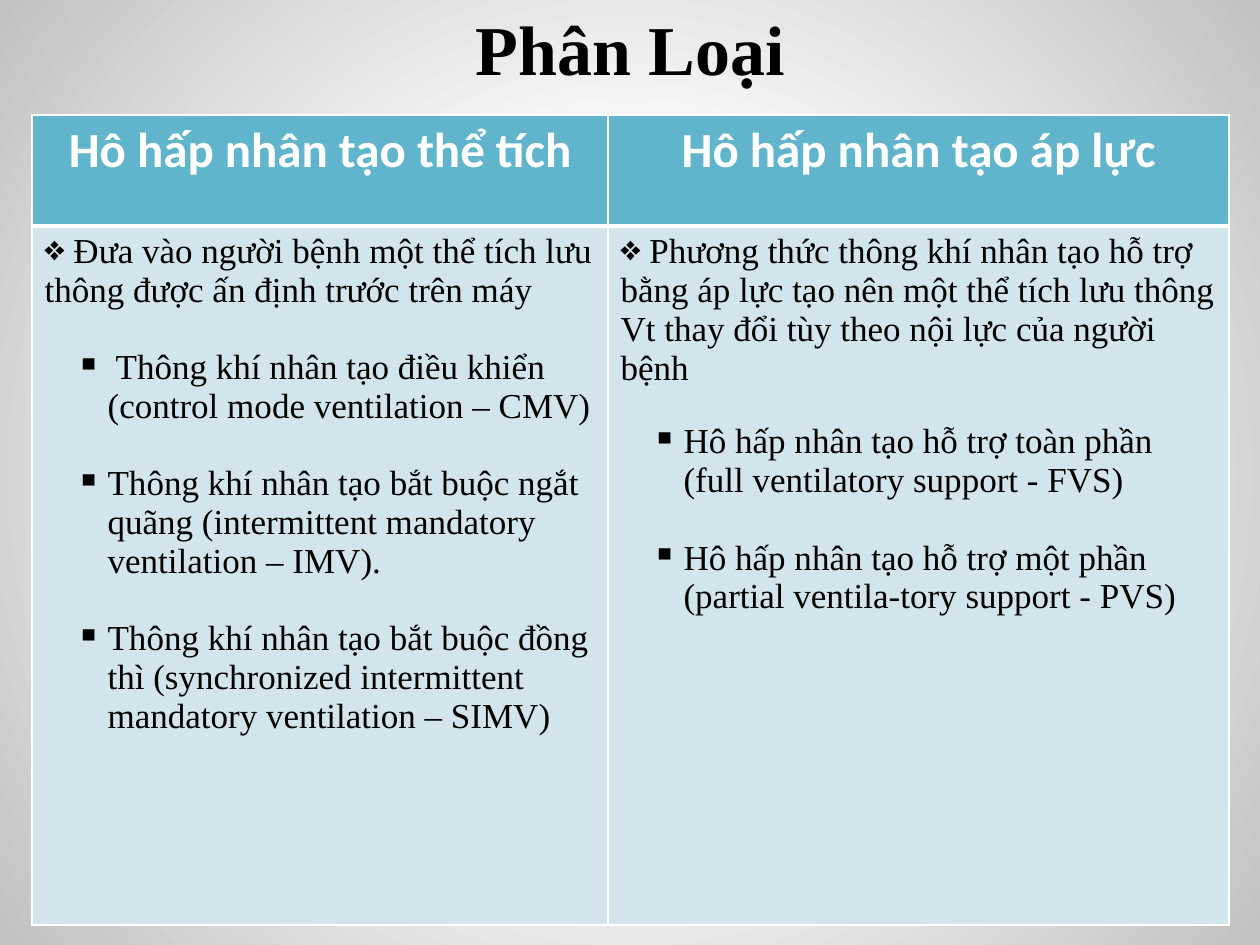
from dataclasses import dataclass

from pptx import Presentation
from pptx.dml.color import RGBColor
from pptx.enum.text import MSO_ANCHOR, MSO_AUTO_SIZE, PP_ALIGN
from pptx.oxml import parse_xml
from pptx.oxml.ns import nsdecls, qn
from pptx.oxml.xmlchemy import OxmlElement
from pptx.util import Emu, Pt

CENTER, LEFT = PP_ALIGN.CENTER, PP_ALIGN.LEFT
MIDDLE, TOP = MSO_ANCHOR.MIDDLE, MSO_ANCHOR.TOP
NO_FIT = MSO_AUTO_SIZE.NONE

BLACK = RGBColor(0x00, 0x00, 0x00)
WHITE = RGBColor(0xFF, 0xFF, 0xFF)
EDGE_GRAY = RGBColor(0xC1, 0xC1, 0xC1)
HEADER_BLUE = RGBColor(0x60, 0xB5, 0xCC)
BODY_BLUE = RGBColor(0xD2, 0xE5, 0xEC)

SERIF = "Times New Roman"
TITLE_FONT = {"name": SERIF, "size": Pt(40), "bold": True}
HEADER_FONT = {"name": "Calibri", "size": Pt(28), "bold": True}
BODY_FONT = {"name": SERIF, "size": Pt(20), "bold": False}

EMU_PER_PX = 914400 / 126
SLIDE_SIZE = (1260, 945)
TITLE_BOX = (63, 0, 1134, 94)
TABLE_LEFT, TABLE_TOP = 32, 115
COLUMN_WIDTHS = (576, 621)
ROW_HEIGHTS = (111, 699)
THIN, THICK = Pt(1), Pt(3)
EN_SPACE = " "  # one half-em space after a bullet


@dataclass(frozen=True)
class Bullet:
    char: str
    level: int
    margin: int
    indent: int


@dataclass(frozen=True)
class Item:
    text: str
    bullet: Bullet
    gap: int = 0  # points before the paragraph


@dataclass(frozen=True)
class Category:
    heading: str
    items: tuple[Item, ...]


DIAMOND = Bullet("❖", 0, 0, 0)
SQUARE = Bullet("▪", 1, 63, -32)

CATEGORIES = (
    Category("Hô hấp nhân tạo thể tích", (
        Item(EN_SPACE + "Đưa vào người bệnh một thể tích lưu thông được ấn định "
             "trước trên máy", DIAMOND),
        Item(EN_SPACE + "Thông khí nhân tạo điều khiển "
             "(control mode ventilation – CMV)", SQUARE, 22),
        Item("Thông khí nhân tạo bắt buộc ngắt quãng "
             "(intermittent mandatory ventilation – IMV).", SQUARE, 22),
        Item("Thông khí nhân tạo bắt buộc đồng thì "
             "(synchronized intermittent mandatory ventilation – SIMV)", SQUARE, 22),
    )),
    Category("Hô hấp nhân tạo áp lực", (
        Item(EN_SPACE + "Phương thức thông khí nhân tạo hỗ trợ bằng áp lực tạo nên "
             "một thể tích lưu thông Vt thay đổi tùy theo nội lực của người bệnh",
             DIAMOND),
        Item("Hô hấp nhân tạo hỗ trợ toàn phần "
             "(full ventilatory support - FVS)", SQUARE, 20),
        Item("Hô hấp nhân tạo hỗ trợ một phần "
             "(partial ventila-tory support - PVS)", SQUARE, 22),
    )),
)


def px(length: int) -> Emu:
    return Emu(round(length * EMU_PER_PX))


def write(paragraph, text: str, font: dict, color: RGBColor, align) -> None:
    paragraph.alignment = align
    run = paragraph.add_run()
    run.text = text
    for key, value in font.items():
        setattr(run.font, key, value)
    run.font.color.rgb = color


def add_bullet(paragraph, bullet: Bullet) -> None:
    paragraph.level = bullet.level
    properties = paragraph._p.get_or_add_pPr()
    properties.set("marL", str(px(bullet.margin)))
    properties.set("indent", str(px(bullet.indent)))
    mark = OxmlElement("a:buChar")
    mark.set("char", bullet.char)
    properties.append(mark)


def style_cell(cell, fill: RGBColor, top: int, bottom: int) -> None:
    cell.fill.solid()
    cell.fill.fore_color.rgb = fill
    cell.vertical_anchor = TOP
    borders = {"lnL": THIN, "lnR": THIN, "lnT": top, "lnB": bottom}
    for position, (side, width) in enumerate(borders.items()):
        cell._tc.get_or_add_tcPr().insert(position, parse_xml(
            f'<a:{side} {nsdecls("a")} w="{int(width)}"><a:solidFill>'
            f'<a:srgbClr val="{WHITE}"/></a:solidFill></a:{side}>'))


def fill_background(slide) -> None:
    slide.background.fill.gradient()
    properties = slide.element.find(f".//{qn('p:bgPr')}")
    properties.replace(properties[0], parse_xml(
        f'<a:gradFill {nsdecls("a")} rotWithShape="1"><a:gsLst>'
        f'<a:gs pos="35000"><a:srgbClr val="{WHITE}"/></a:gs>'
        f'<a:gs pos="100000"><a:srgbClr val="{EDGE_GRAY}"/></a:gs></a:gsLst>'
        '<a:path path="circle"><a:fillToRect l="50000" t="50000" r="50000" b="50000"/>'
        '</a:path></a:gradFill>'))


def add_title(slide, text: str) -> None:
    title = slide.shapes.title
    title.left, title.top, title.width, title.height = map(px, TITLE_BOX)
    frame = title.text_frame
    frame.auto_size = NO_FIT
    frame.vertical_anchor = MIDDLE
    write(frame.paragraphs[0], text, TITLE_FONT, BLACK, CENTER)


def add_comparison(slide, categories: tuple[Category, ...]) -> None:
    table = slide.shapes.add_table(
        len(ROW_HEIGHTS), len(categories), px(TABLE_LEFT), px(TABLE_TOP),
        px(sum(COLUMN_WIDTHS)), px(sum(ROW_HEIGHTS))).table
    table.horz_banding = False
    for row, height in zip(table.rows, ROW_HEIGHTS):
        row.height = px(height)
    for index, category in enumerate(categories):
        table.columns[index].width = px(COLUMN_WIDTHS[index])
        # Heading
        header = table.cell(0, index)
        style_cell(header, HEADER_BLUE, THIN, THICK)
        write(header.text_frame.paragraphs[0], category.heading,
              HEADER_FONT, WHITE, CENTER)
        # Bulleted description
        body = table.cell(1, index)
        style_cell(body, BODY_BLUE, THICK, THIN)
        frame = body.text_frame
        for number, item in enumerate(category.items):
            paragraph = frame.add_paragraph() if number else frame.paragraphs[0]
            add_bullet(paragraph, item.bullet)
            if item.gap:
                paragraph.space_before = Pt(item.gap)
            write(paragraph, item.text, BODY_FONT, BLACK, LEFT)


def main() -> None:
    presentation = Presentation()
    presentation.slide_width, presentation.slide_height = map(px, SLIDE_SIZE)
    slide = presentation.slides.add_slide(presentation.slide_layouts[5])
    fill_background(slide)
    add_title(slide, "Phân Loại")
    add_comparison(slide, CATEGORIES)
    presentation.save("out.pptx")


if __name__ == "__main__":
    main()
